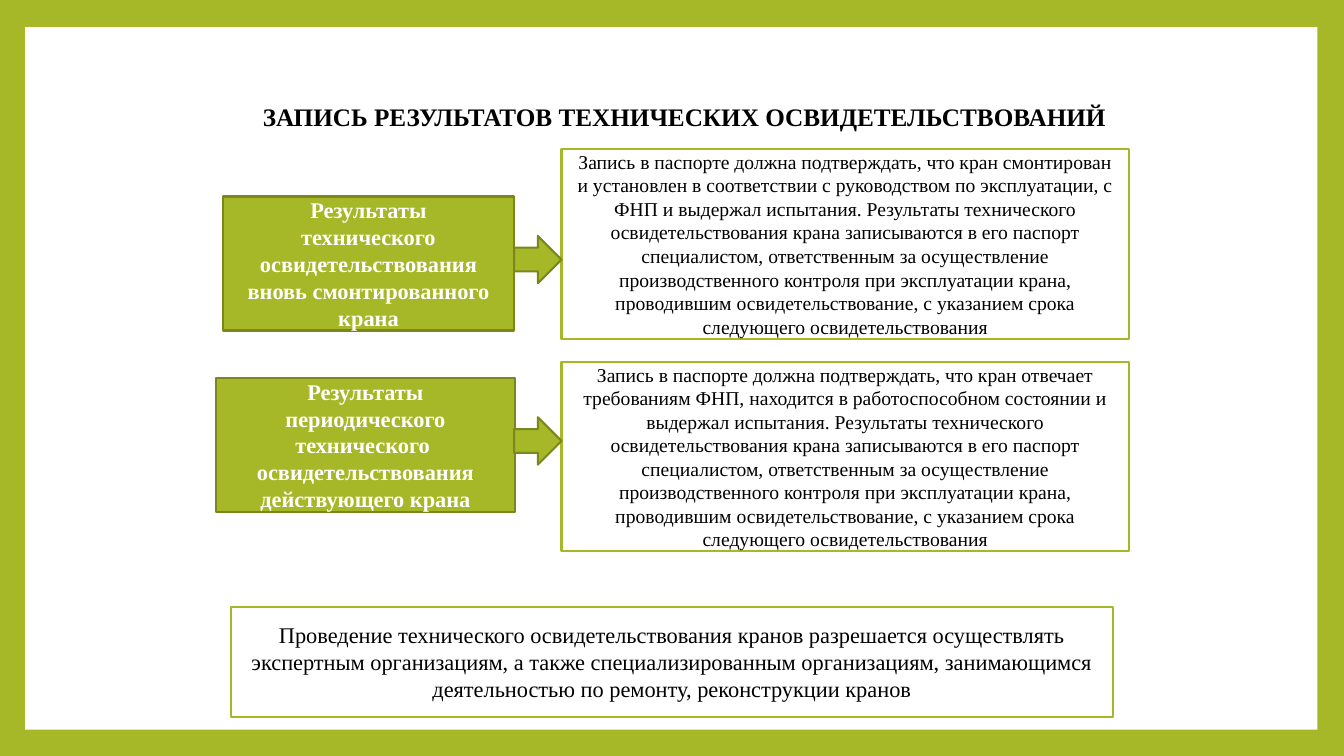
from dataclasses import dataclass

from pptx import Presentation
from pptx import util as u
from pptx.dml.color import RGBColor
from pptx.enum import shapes, text

FONT = "Times New Roman"
GREEN, OLIVE, WHITE, BLACK = "A6B727", "7B871D", "FFFFFF", "000000"
RECT = shapes.MSO_SHAPE.RECTANGLE
ARROW = shapes.MSO_SHAPE.RIGHT_ARROW
WIDE, HIGH = u.Inches(13.333), u.Inches(7.5)


@dataclass
class Area:
    left: float
    top: float
    width: float
    height: float

    def place(self) -> tuple[int, int, int, int]:
        return (int(WIDE * self.left / 100), int(HIGH * self.top / 100),
                int(WIDE * self.width / 100), int(HIGH * self.height / 100))


@dataclass
class Style:
    fill: str
    line: str
    ink: str
    size: int
    bold: bool = False


@dataclass
class Row:
    left: float
    width: float
    top: float
    note_top: float
    label: str
    note: str


LABEL = Style(GREEN, OLIVE, WHITE, 16, True)
NOTE = Style(WHITE, GREEN, BLACK, 14)
FOOT = Style(WHITE, GREEN, BLACK, 16)
FRAME = Style(WHITE, "", BLACK, 16)
HEAD = Style("", "", BLACK, 18, True)

TAIL = (
    " выдержал испытания. Результаты технического освидетельствования крана "
    "записываются в его паспорт специалистом, ответственным за осуществление "
    "производственного контроля при эксплуатации крана, проводившим "
    "освидетельствование, с указанием срока следующего освидетельствования"
)
ROWS = [
    Row(16.58, 21.68, 26, 19.73,
        "Результаты\nтехнического\nосвидетельствования\nвновь смонтированного\nкрана",
        "Запись в паспорте должна подтверждать, что кран смонтирован и установлен "
        "в соответствии с руководством по эксплуатации, с ФНП и" + TAIL),
    Row(16.05, 22.28, 50, 47.87,
        "Результаты периодического\nтехнического \nосвидетельствования действующего крана",
        "Запись в паспорте должна подтверждать, что кран отвечает требованиям ФНП, "
        "находится в работоспособном состоянии и" + TAIL),
]


def tint(code: str) -> RGBColor:
    return RGBColor.from_string(code)


def write(item, words: str, style: Style, space: float = 1) -> None:
    frame = item.text_frame
    frame.word_wrap = True
    frame.vertical_anchor = text.MSO_ANCHOR.MIDDLE
    frame.text = words
    for para in frame.paragraphs:
        para.alignment = text.PP_ALIGN.CENTER
        para.line_spacing = space
        para.font.name = FONT
        para.font.size = u.Pt(style.size)
        para.font.bold = style.bold
        para.font.color.rgb = tint(style.ink)


def draw(slide, area: Area, style: Style, words: str = "", kind=RECT) -> None:
    item = slide.shapes.add_shape(kind, *area.place())
    item.shadow.inherit = False
    item.fill.solid()
    item.fill.fore_color.rgb = tint(style.fill)
    if style.line:
        item.line.color.rgb = tint(style.line)
        item.line.width = u.Pt(1.5)
    else:
        item.line.fill.background()
    if words:
        write(item, words, style)


def main() -> None:
    deck = Presentation()
    deck.slide_width, deck.slide_height = WIDE, HIGH
    slide = deck.slides.add_slide(deck.slide_layouts[6])
    slide.background.fill.solid()
    slide.background.fill.fore_color.rgb = tint(GREEN)

    draw(slide, Area(1.88, 3.6, 96.15, 92.93), FRAME)
    title = slide.shapes.add_textbox(*Area(17.18, 11.47, 67.5, 8.4).place())
    write(title, "ЗАПИСЬ РЕЗУЛЬТАТОВ ТЕХНИЧЕСКИХ ОСВИДЕТЕЛЬСТВОВАНИЙ", HEAD, 0.9)

    for row in ROWS:
        draw(slide, Area(row.left, row.top, row.width, 17.73), LABEL, row.label)
        draw(slide, Area(41.78, row.note_top, 42.23, 25.07), NOTE, row.note)
        draw(slide, Area(38.25, row.top + 5.2, 3.53, 6.27), LABEL, kind=ARROW)

    draw(slide, Area(17.18, 80.27, 65.63, 14.53), FOOT,
         "Проведение технического освидетельствования кранов разрешается "
         "осуществлять экспертным организациям, а также специализированным "
         "организациям, занимающимся деятельностью по ремонту, реконструкции кранов")
    deck.save("out.pptx")


if __name__ == "__main__":
    main()
